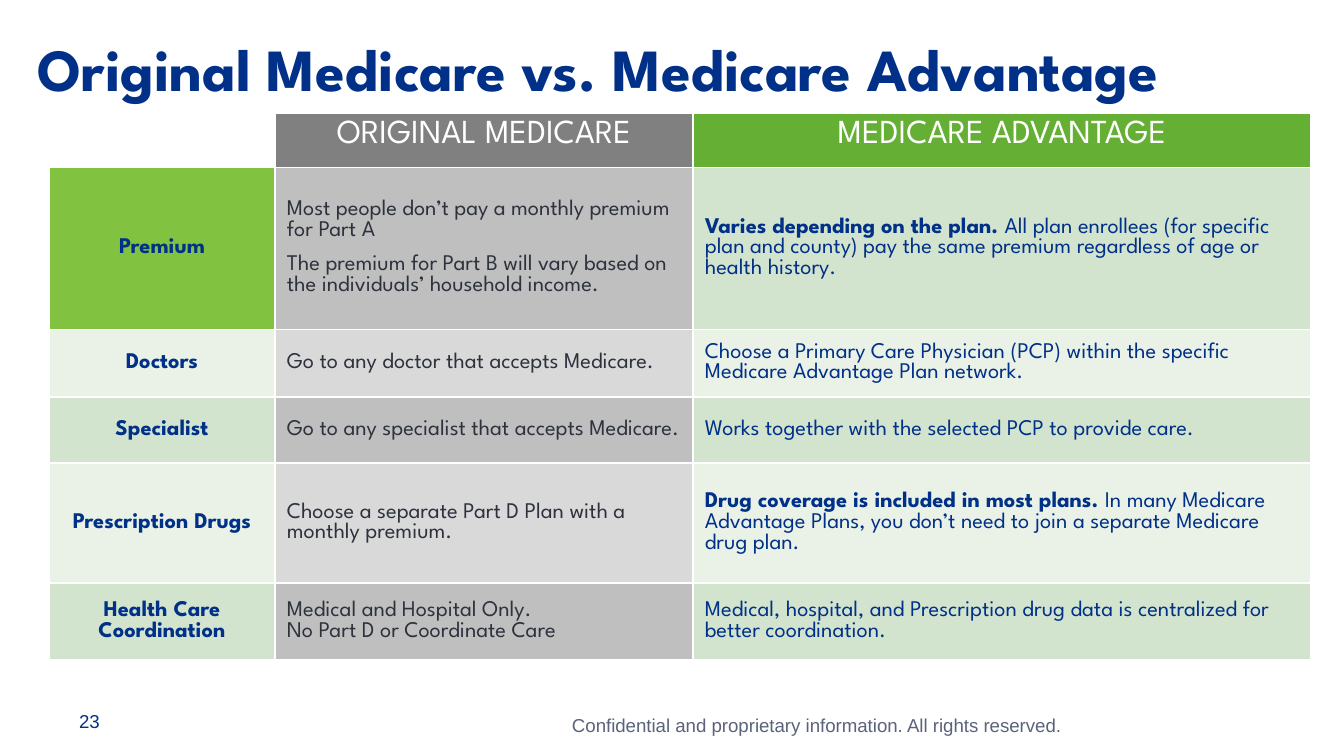
from lxml.etree import SubElement
from pptx import Presentation
from pptx.dml.color import RGBColor
from pptx.enum.text import MSO_ANCHOR as ANCHOR, PP_ALIGN as ALIGN
from pptx.oxml.ns import qn
from pptx.util import Pt

PX = 914400 / 134.4
COLORS = {
    "navy": "003087", "ink": "2D323D", "muted": "5A637A", "white": "FFFFFF",
    "green": "65B034", "lime": "81C341", "sage": "D3E4CE", "mint": "EAF2E8",
    "gray": "808080", "silver": "BFBFBF", "pale": "D9D9D9",
}
SPARTAN = "League Spartan"


def px(n):
    return round(n * PX)


def add_run(p, text, size, color, bold=False, font=SPARTAN):
    r = p.add_run()
    r.text = text
    r.font.size, r.font.name, r.font.bold = Pt(size), font, bold
    r.font.color.rgb = RGBColor.from_string(COLORS[color])


prs = Presentation()
prs.slide_width, prs.slide_height = px(1344), px(756)
s = prs.slides.add_slide(prs.slide_layouts[6])

# Title, footer and page number: box, anchor, alignment, run
texts = [
    ((24, 25, 1297, 69), ANCHOR.TOP, ALIGN.LEFT,
     ("Original Medicare vs. Medicare Advantage", 32, "navy", True)),
    ((538, 707, 536, 36), ANCHOR.TOP, ALIGN.RIGHT,
     ("Confidential and proprietary information. All rights reserved.",
      10, "muted", False, "Arial")),
    ((66, 706, 78, 33), ANCHOR.BOTTOM, ALIGN.LEFT,
     ("23", 10, "navy", False, "Arial")),
]
for box, anchor, align, run in texts:
    tf = s.shapes.add_textbox(*map(px, box)).text_frame
    tf.word_wrap = True
    tf.margin_top = px(7)
    tf.vertical_anchor = anchor
    tf.paragraphs[0].alignment = align
    add_run(tf.paragraphs[0], *run)

# Table content: each cell is a list of paragraphs, each a list of (text, bold)
rows = [
    [[], [[("ORIGINAL MEDICARE", False)]], [[("MEDICARE ADVANTAGE", False)]]],
    [[[("Premium", True)]],
     [[("Most people don’t pay a monthly premium for Part A", False)],
      [("The premium for Part B will vary based on the individuals’ "
        "household income.", False)]],
     [[("Varies depending on the plan. ", True),
       ("All plan enrollees (for specific plan and county) pay the same "
        "premium regardless of age or health history.", False)]]],
    [[[("Doctors", True)]],
     [[("Go to any doctor that accepts Medicare.", False)]],
     [[("Choose a Primary Care Physician (PCP) within the specific "
        "Medicare Advantage Plan network.", False)]]],
    [[[("Specialist", True)]],
     [[("Go to any specialist that accepts Medicare.", False)]],
     [[("Works together with the selected PCP to provide care.", False)]]],
    [[[("Prescription Drugs", True)]],
     [[("Choose a separate Part D Plan with a monthly premium.", False)]],
     [[("Drug coverage is included in most plans. ", True),
       ("In many Medicare Advantage Plans, you don’t need to join a "
        "separate Medicare drug plan.", False)]]],
    [[[("Health Care Coordination", True)]],
     [[("Medical and Hospital Only.", False)],
      [("No Part D or Coordinate Care", False)]],
     [[("Medical, hospital, and Prescription drug data is centralized for "
        "better coordination.", False)]]],
]
col_widths = [226, 418, 618]
row_heights = [46, 162, 66, 66, 120, 77]
header_fills = [None, "gray", "green"]
band_fills = [["mint", "pale", "mint"], ["sage", "silver", "sage"]]

table = s.shapes.add_table(len(rows), len(col_widths), px(49), px(113),
                           px(sum(col_widths)), px(sum(row_heights))).table
table.first_row = table.horz_banding = False
for col, width in zip(table.columns, col_widths):
    col.width = px(width)
for row, height in zip(table.rows, row_heights):
    row.height = px(height)

for i, row in enumerate(rows):
    for j, paragraphs in enumerate(row):
        cell = table.cell(i, j)
        header = i == 0
        cell.margin_left = cell.margin_right = px(12)
        # The empty corner has no margin, so it cannot stretch the header row
        cell.margin_top = cell.margin_bottom = px(7 if paragraphs else 0)
        cell.vertical_anchor = ANCHOR.TOP if header else ANCHOR.MIDDLE

        # White borders
        tcPr = cell._tc.get_or_add_tcPr()
        for side in "LRTB":
            ln = SubElement(tcPr, qn(f"a:ln{side}"), w=str(Pt(1)))
            fill = SubElement(ln, qn("a:solidFill"))
            SubElement(fill, qn("a:srgbClr"), val=COLORS["white"])

        # Fill
        color = header_fills[j] if header else band_fills[i % 2][j]
        if (i, j) == (1, 0):
            color = "lime"
        if color:
            cell.fill.solid()
            cell.fill.fore_color.rgb = RGBColor.from_string(COLORS[color])
        else:
            cell.fill.background()

        # Text
        tf = cell.text_frame
        for k, runs in enumerate(paragraphs):
            p = tf.add_paragraph() if k else tf.paragraphs[0]
            p.alignment = ALIGN.CENTER if header or j == 0 else ALIGN.LEFT
            if k and i == 1:
                p.space_before = Pt(7.4)
            ink = "white" if header else "ink" if j == 1 else "navy"
            for text, bold in runs:
                add_run(p, text, 18 if header else 12, ink, bold)

prs.save("out.pptx")
